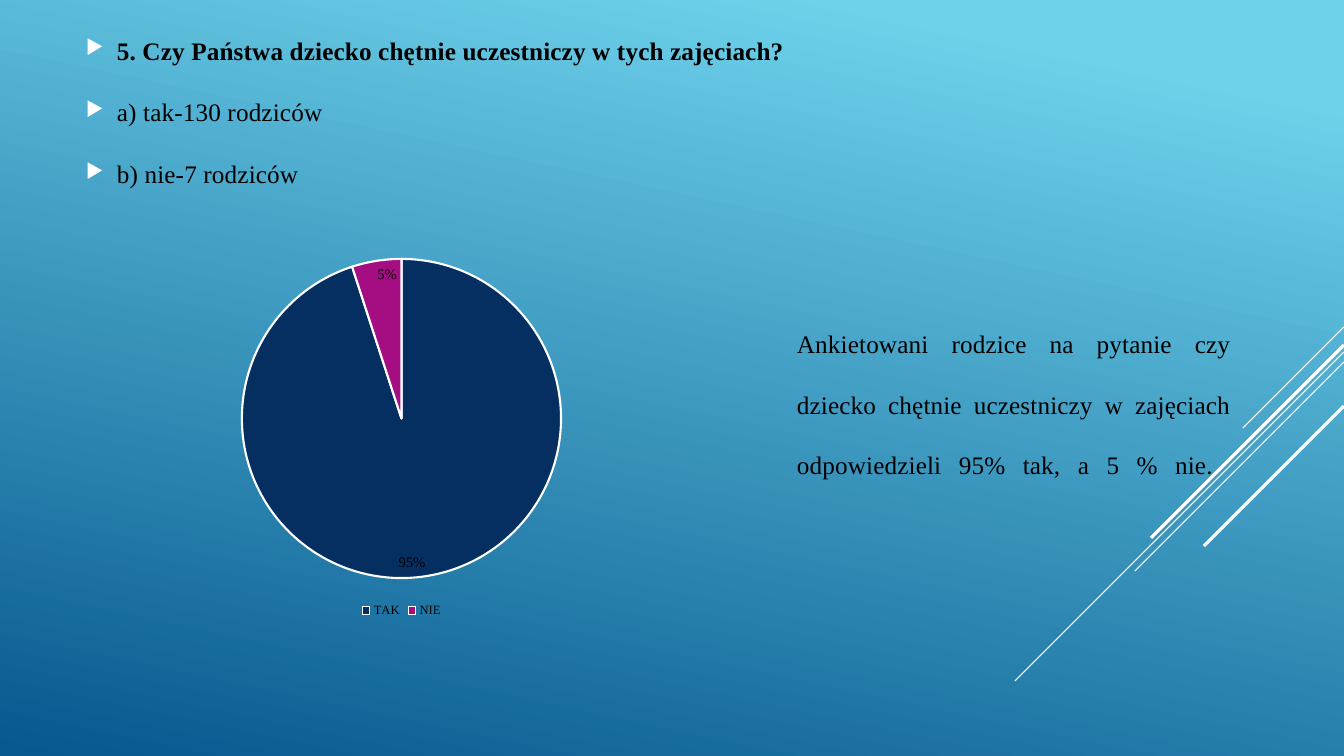
import pptx
import pptx.chart.data
import pptx.dml.color
import pptx.enum.chart
import pptx.enum.shapes
import pptx.enum.text
import pptx.oxml
import pptx.oxml.ns
import pptx.util

SCALE = 914400 / 100.8
SERIF = "Times New Roman"
HUES = {
    "sky": "6ED2EB",
    "sea": "06588E",
    "white": "FFFFFF",
    "black": "000000",
    "navy": "052F61",
    "plum": "A50E82",
}
RAYS = [(327, 101, 0.75), (352, 329, 0.75), (362, 209, 0.75), (345, 193, 2.25), (406, 140, 2.25)]
LINES = [
    "5. Czy Państwa dziecko chętnie uczestniczy w tych zajęciach?",
    "a) tak-130 rodziców",
    "b) nie-7 rodziców",
]
REMARK = (
    "Ankietowani rodzice na pytanie czy dziecko chętnie uczestniczy "
    "w zajęciach odpowiedzieli 95% tak, a 5 % nie. \v"
)


def px(count):
    """Turn pixels into EMU."""
    return pptx.util.Emu(round(count * SCALE))


def hue(name):
    """Look up a colour."""
    return pptx.dml.color.RGBColor.from_string(HUES[name])


def style(font, size, bold=False):
    """Set a black serif font."""
    font.name = SERIF
    font.size = pptx.util.Pt(size)
    font.bold = bold
    font.color.rgb = hue("black")


def paint(slide):
    """Fill the background with a gradient."""
    fill = slide.background.fill
    fill.gradient()
    fill.gradient_angle = 258
    for stop, name, place in zip(fill.gradient_stops, ("sky", "sea"), (0.1, 1)):
        stop.color.rgb = hue(name)
        stop.position = place


def ray(slide, top, reach, width):
    """Draw a diagonal from the right edge."""
    line = slide.shapes.add_connector(
        pptx.enum.shapes.MSO_CONNECTOR.STRAIGHT,
        px(1344), px(top), px(1344 - reach), px(top + reach),
    )
    line.line.color.rgb = hue("white")
    line.line.width = pptx.util.Pt(width)
    props = line._element.spPr
    props.append(props.makeelement(pptx.oxml.ns.qn("a:effectLst"), {}))


def frame(slide, box, anchor, head):
    """Add a wrapping text box with a top inset."""
    text = slide.shapes.add_textbox(*map(px, box)).text_frame
    text.word_wrap = True
    text.vertical_anchor = anchor
    text.margin_top = px(head)
    return text


def write(para, words, space, bold=False):
    """Fill a paragraph with spaced serif text."""
    para.text = words
    para.line_spacing = space
    style(para.font, 18, bold)
    for run in para.runs:
        run._r.get_or_add_rPr().set("spc", "10")


def bullet(para):
    """Give a paragraph a white triangle bullet."""
    props = para._p.get_or_add_pPr()
    props.set("marL", str(px(31)))
    props.set("indent", str(-px(31)))
    space = pptx.oxml.ns.nsdecls("a")
    marks = [
        f'<a:buClr {space}><a:srgbClr val="{HUES["white"]}"/></a:buClr>',
        f'<a:buSzPct {space} val="80000"/>',
        f'<a:buChar {space} char="▶"/>',
    ]
    for mark in marks:
        props.insert_element_before(pptx.oxml.parse_xml(mark), "a:tabLst", "a:defRPr")


def survey(slide):
    """List the question and its answers."""
    text = frame(slide, (76, 20, 1228, 199), pptx.enum.text.MSO_ANCHOR.TOP, 0)
    for rank, words in enumerate(LINES):
        para = text.add_paragraph() if rank else text.paragraphs[0]
        write(para, words, 1.5, rank == 0)
        para.space_before = pptx.util.Pt(3.6 if rank else 0)
        para.space_after = pptx.util.Pt(8)
        bullet(para)


def remark(slide):
    """Write the justified summary."""
    text = frame(slide, (787, 49, 454, 528), pptx.enum.text.MSO_ANCHOR.MIDDLE, 187)
    para = text.paragraphs[0]
    write(para, REMARK, 2)
    para.alignment = pptx.enum.text.PP_ALIGN.JUSTIFY


def pie(slide):
    """Add the pie chart of answers."""
    data = pptx.chart.data.CategoryChartData(number_format="0%")
    data.categories = ["TAK", "NIE"]
    data.add_series("Series 1", (0.95, 0.05))
    chart = slide.shapes.add_chart(
        pptx.enum.chart.XL_CHART_TYPE.PIE, px(76), px(245), px(651), px(377), data
    ).chart
    chart.has_title = False
    style(chart.font, 10)
    chart.has_legend = True
    chart.legend.position = pptx.enum.chart.XL_LEGEND_POSITION.BOTTOM
    chart.legend.include_in_layout = False
    style(chart.legend.font, 9)
    plot = chart.plots[0]
    plot.vary_by_categories = True
    for rank, name in enumerate(("navy", "plum")):
        form = plot.series[0].points[rank].format
        form.fill.solid()
        form.fill.fore_color.rgb = hue(name)
        form.line.color.rgb = hue("white")
        form.line.width = pptx.util.Pt(1.5)
    plot.has_data_labels = True
    tags = plot.data_labels
    tags.show_value = True
    tags.show_percentage = False
    tags.number_format = "0%"
    tags.number_format_is_linked = False
    tags.position = pptx.enum.chart.XL_LABEL_POSITION.INSIDE_END
    style(tags.font, 10.5)


def main():
    """Build and save the slide."""
    deck = pptx.Presentation()
    deck.slide_width = px(1344)
    deck.slide_height = px(756)
    slide = deck.slides.add_slide(deck.slide_layouts[6])
    paint(slide)
    for top, reach, width in RAYS:
        ray(slide, top, reach, width)
    remark(slide)
    survey(slide)
    pie(slide)
    deck.save("out.pptx")


if __name__ == "__main__":
    main()
